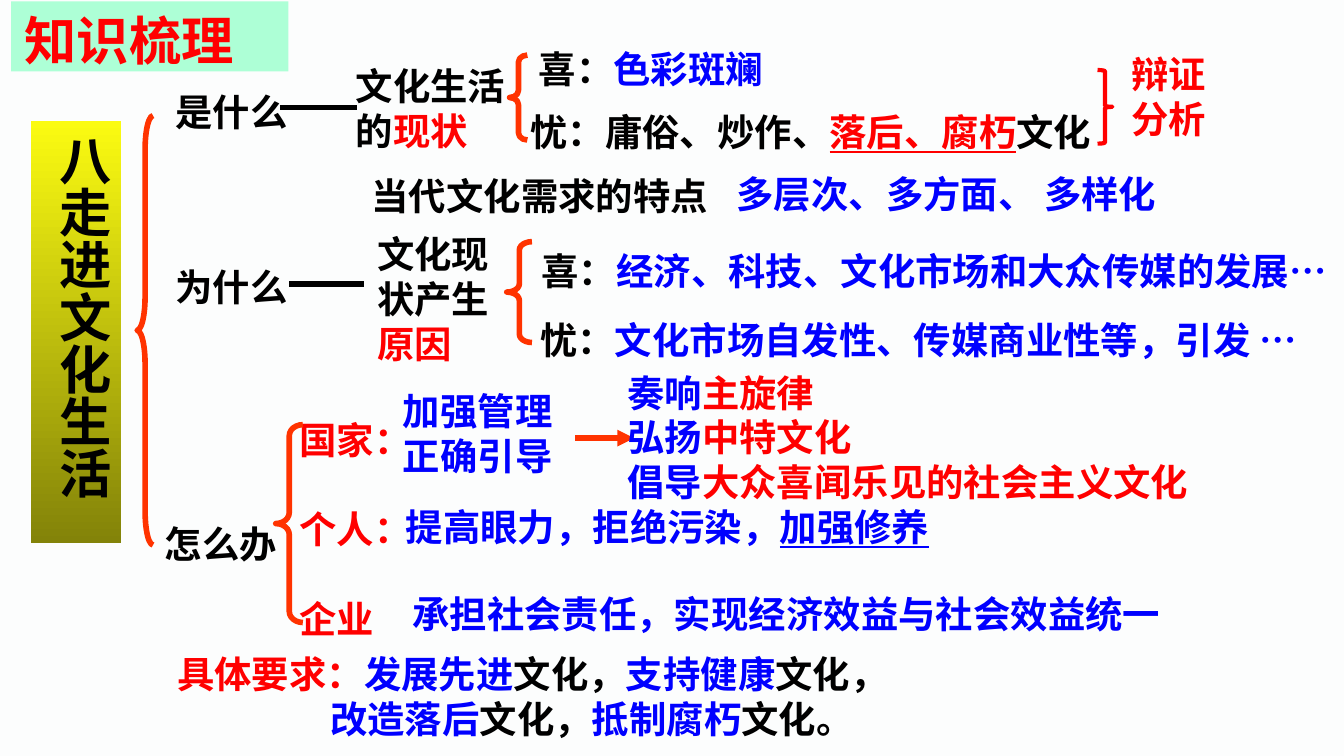
from lxml import etree
from pptx import Presentation
from pptx.dml.color import RGBColor
from pptx.enum.shapes import MSO_CONNECTOR, MSO_SHAPE
from pptx.enum.text import MSO_ANCHOR, MSO_AUTO_SIZE, PP_ALIGN
from pptx.oxml.ns import qn
from pptx.util import Pt

STRAIGHT = MSO_CONNECTOR.STRAIGHT
RECTANGLE = MSO_SHAPE.RECTANGLE
LEFT_BRACE, RIGHT_BRACE = MSO_SHAPE.LEFT_BRACE, MSO_SHAPE.RIGHT_BRACE
TOP, LEFT, NO_FIT = MSO_ANCHOR.TOP, PP_ALIGN.LEFT, MSO_AUTO_SIZE.NONE

COLORS = {
    "background": "FCFDFD", "black": "000000", "red": "FF0000",
    "blue": "0000FF", "orange": "FF3300", "mint": "ADFFD6",
    "yellow": "FBFB11", "olive": "838309",
}
SANS, ARIAL = "DejaVu Sans", "Arial"
ONE_LINE, TWO_LINES, THREE_LINES = 31, 55.5, 79


def color(name):
    return RGBColor.from_string(COLORS[name])


def place(shape, box, x, y, width, height):
    """Put a shape at an offset from its region's top left corner."""
    shape.left, shape.top = Pt(box[0] + x), Pt(box[1] + y)
    shape.width, shape.height = Pt(width), Pt(height)


def write(shape, paragraphs, font=SANS, size=20, wrap=True):
    """Each paragraph is a list of (text, color, [font or "underline"]) runs."""
    frame = shape.text_frame
    frame.word_wrap = wrap
    frame.auto_size = NO_FIT
    frame.vertical_anchor = TOP
    for index, runs in enumerate(paragraphs):
        paragraph = frame.paragraphs[0] if index == 0 else frame.add_paragraph()
        paragraph.alignment = LEFT
        paragraph.space_before = Pt(0)
        for text, color_name, *extra in runs:
            run = paragraph.add_run()
            run.text = text
            run.font.size = Pt(size)
            run.font.bold = True
            run.font.color.rgb = color(color_name)
            run.font.underline = True if "underline" in extra else None
            run.font.name = ARIAL if ARIAL in extra else SANS if SANS in extra else font
    return frame


def add_text(slide, box, x, y, width, height, *paragraphs, font=SANS, wrap=True):
    shape = slide.shapes.add_textbox(0, 0, 0, 0)
    place(shape, box, x, y, width, height)
    return write(shape, paragraphs, font, wrap=wrap)


def add_brace(slide, box, x, y, width, height, curl, kind=LEFT_BRACE,
              color_name="orange", weight=3):
    brace = slide.shapes.add_shape(kind, 0, 0, 0, 0)
    place(brace, box, x, y, width, height)
    brace.adjustments[0] = curl
    brace.shadow.inherit = False
    brace.fill.background()
    brace.line.color.rgb = color(color_name)
    brace.line.width = Pt(weight)


def add_line(slide, box, x, y, length, color_name="black", arrow=False):
    left, top = box[0] + x, box[1] + y
    line = slide.shapes.add_connector(STRAIGHT, Pt(left), Pt(top), Pt(left + length), Pt(top))
    line.line.color.rgb = color(color_name)
    line.line.width = Pt(3)
    if arrow:
        etree.SubElement(line.line._get_or_add_ln(), qn("a:tailEnd"), type="triangle")
    etree.SubElement(line._element.spPr, qn("a:effectLst"))


def build_title(slide, box):
    title = slide.shapes.title
    place(title, box, 0, 0, 148.5, 37.5)
    title.fill.solid()
    title.fill.fore_color.rgb = color("mint")
    write(title, [[("知识梳理", "red")]], ARIAL, 28)


def build_topic(slide, box):
    # Vertical topic bar and the brace that opens the three questions
    bar = slide.shapes.add_shape(RECTANGLE, 0, 0, 0, 0)
    place(bar, box, 0, 0, 48.5, 226)
    bar.shadow.inherit = False
    bar.line.fill.background()
    bar.fill.gradient()
    bar.fill.gradient_angle = 270
    for stop, name in zip(bar.fill.gradient_stops, ("yellow", "olive")):
        stop.color.rgb = color(name)
    frame = write(bar, [[("八走进文化生活", "black")]], size=28)
    frame._txBody.bodyPr.set("vert", "eaVert")
    add_brace(slide, box, 57, -3, 8.5, 230, 2.125)


def build_what(slide, box):
    add_text(slide, box, 0, 23, 76.5, ONE_LINE, [("是什么", "black")])
    add_line(slide, box, 63, 36.5, 41)
    add_text(slide, box, 96.5, 9.25, 97, TWO_LINES,
             [("文化生活的", "black"), ("现状", "red")])
    # Good and bad sides
    add_brace(slide, box, 186, 8.5, 9.5, 45.5, 0.398)
    add_text(slide, box, 194.5, 0, 243, ONE_LINE,
             [("喜：", "black"), ("色彩斑斓", "blue")])
    add_text(slide, box, 190, 33.75, 353, ONE_LINE,
             [("忧：庸俗、炒作、", "black"), ("落后、腐朽", "red", "underline"),
              ("文化", "black")])
    # Conclusion
    add_brace(slide, box, 501, 16.5, 8, 39.5, 0.083, RIGHT_BRACE, "red", 2.25)
    add_text(slide, box, 512, 2.75, 103, TWO_LINES,
             [("辩证", "red")], [("分析", "red")])


def build_why(slide, box):
    add_text(slide, box, 0, 50.25, 76.5, ONE_LINE, [("为什么", "black")])
    add_line(slide, box, 68, 64, 40)
    # Features of demand
    add_text(slide, box, 105, 1.25, 195, ONE_LINE,
             [("当代文化需求的特点", "black")], font=ARIAL, wrap=False)
    add_text(slide, box, 300.5, 0, 299, ONE_LINE,
             [("多层次、多方面、 多样化", "blue")], font=ARIAL)
    # Causes
    add_text(slide, box, 108, 32.25, 85.5, THREE_LINES,
             [("文化现状产生", "black"), ("原因", "red")])
    add_brace(slide, box, 184.5, 41.5, 13.5, 54, 0.331)
    add_text(slide, box, 196, 41.5, 441, ONE_LINE,
             [("喜：", "black"), ("经济、科技、文化市场和大众传媒的发展", "blue"),
              ("…", "blue", ARIAL)])
    add_text(slide, box, 195.25, 78.5, 452, ONE_LINE,
             [("忧：", "black"), ("文化市场自发性、传媒商业性等，引发 ", "blue"),
              ("…", "blue", ARIAL)])


def build_how(slide, box):
    add_text(slide, box, 0, 81.5, 76.5, ONE_LINE, [("怎么办", "black")])
    add_brace(slide, box, 66.5, 33.25, 14.5, 106, 0.409)
    # Who acts
    actors = slide.placeholders[1]
    place(actors, box, 72, 1.5, 97, 151)
    frame = write(actors, [[(name, "red")] for name in ("国家：", "个人：", "企业")])
    for paragraph in frame.paragraphs:
        paragraph.line_spacing = 2.0
        properties = paragraph._p.get_or_add_pPr()
        properties.set("marL", "0")
        properties.set("indent", "0")
        etree.SubElement(properties, qn("a:buNone"))
    # State
    add_text(slide, box, 127.5, 10.25, 95, TWO_LINES,
             [("加强管理", "blue")], [("正确引导", "blue")], font=ARIAL)
    add_line(slide, box, 227, 40.5, 31.5, "orange", arrow=True)
    goals = (("奏响", "主旋律"), ("弘扬", "中特文化"), ("倡导", "大众喜闻乐见的社会主义文化"))
    add_text(slide, box, 247.75, 0.25, 363, THREE_LINES,
             *[[(verb, "blue"), (goal, "red")] for verb, goal in goals], font=ARIAL)
    # Individual and enterprise
    add_text(slide, box, 129, 72.25, 362, ONE_LINE,
             [("提高眼力，拒绝污染，", "blue"), ("加强修养", "blue", "underline")])
    add_text(slide, box, 132.5, 119, 522.5, ONE_LINE,
             [("承担社会责任，实现", "blue", ARIAL), ("经济效益与社会效益统一", "blue")])


def build_requirements(slide, box):
    pairs = (("发展先进", "文化，"), ("支持健康", "文化，"),
             ("改造落后", "文化，"), ("抵制腐朽", "文化。"))
    runs = [run for verb, noun in pairs for run in ((verb, "blue"), (noun, "black"))]
    frame = add_text(slide, box, 0, 0, 428, TWO_LINES,
                     [("具体要求：", "red"), *runs[:4]], runs[4:], font=ARIAL)
    frame.paragraphs[1]._p.get_or_add_pPr().set("marL", str(Pt(82)))


def main():
    presentation = Presentation()
    presentation.slide_width, presentation.slide_height = Pt(720), Pt(405)
    slide = presentation.slides.add_slide(presentation.slide_layouts[1])
    slide.background.fill.solid()
    slide.background.fill.fore_color.rgb = color("background")
    build_topic(slide, (16.5, 65))
    build_what(slide, (87, 21))
    build_why(slide, (87, 88))
    build_how(slide, (81.25, 194.25))
    build_requirements(slide, (87.75, 345.5))
    build_title(slide, (6, 0.75))
    presentation.save("out.pptx")


if __name__ == "__main__":
    main()
